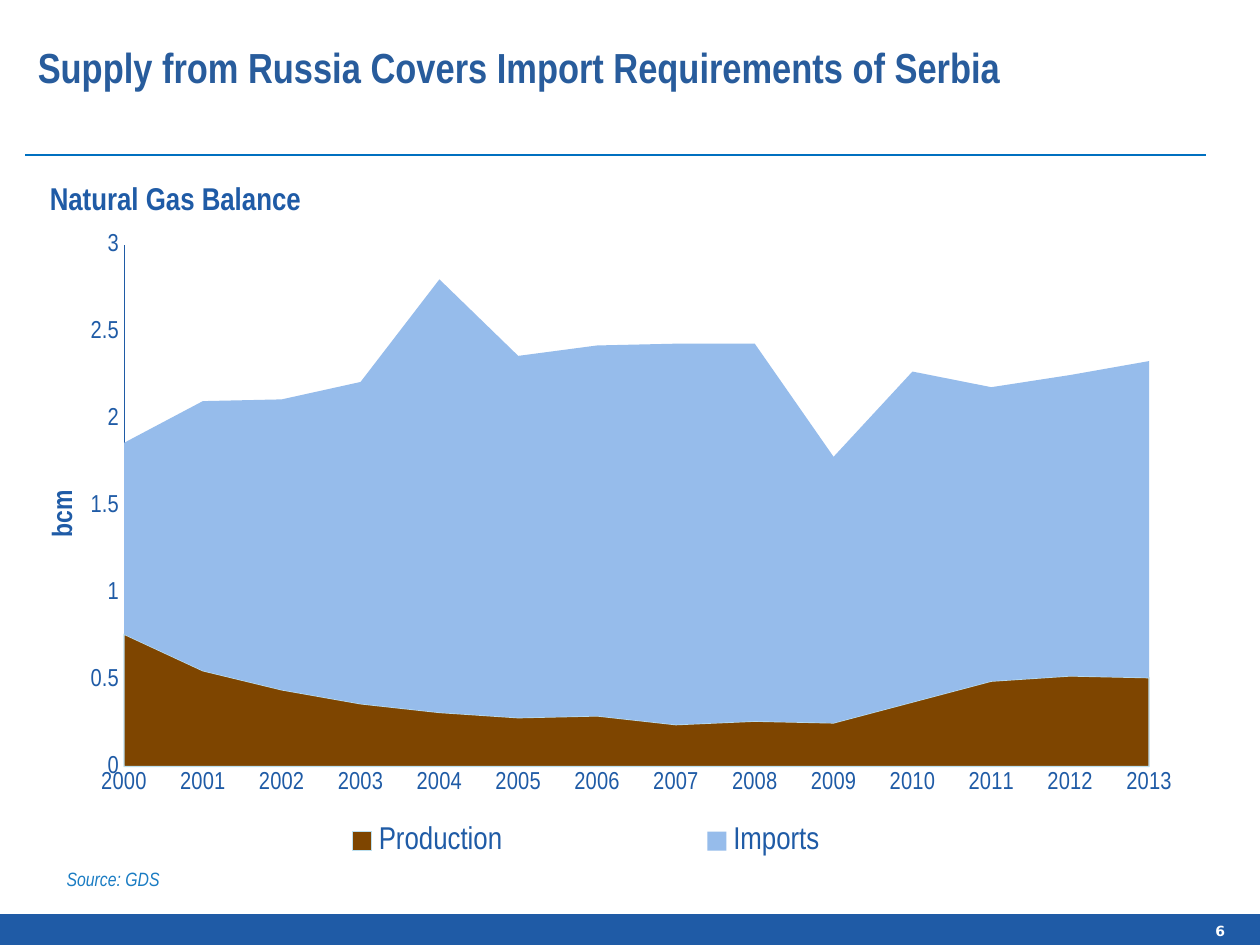
from dataclasses import dataclass

from lxml.etree import SubElement
from pptx import Presentation
from pptx.chart.data import CategoryChartData
from pptx.dml.color import RGBColor
from pptx.enum.chart import XL_CHART_TYPE as ChartType
from pptx.enum.chart import XL_LEGEND_POSITION as LegendPosition
from pptx.enum.chart import XL_TICK_MARK as TickMark
from pptx.enum.shapes import MSO_CONNECTOR as Connector
from pptx.enum.shapes import MSO_SHAPE as ShapeType
from pptx.enum.text import MSO_ANCHOR as Anchor
from pptx.enum.text import PP_ALIGN as Align
from pptx.oxml import parse_xml
from pptx.oxml.ns import nsdecls, qn
from pptx.util import Inches, Pt


@dataclass(frozen=True)
class Theme:
    blue: str = "1F5BA6"
    title_blue: str = "285C9C"
    rule_blue: str = "0070C0"
    source_blue: str = "1A7CC3"
    white: str = "FFFFFF"
    outline: str = "BDE0EF"
    narrow: str = "Arial Narrow"
    sans: str = "DejaVu Sans"
    title_size: int = 24
    heading_size: int = 18
    unit_size: int = 16
    axis_size: int = 14
    source_size: int = 11
    number_size: int = 8


@dataclass(frozen=True)
class Box:
    left: float
    top: float
    width: float
    height: float

    def lengths(self) -> tuple:
        return tuple(Inches(v) for v in (self.left, self.top, self.width, self.height))


@dataclass(frozen=True)
class GasSeries:
    name: str
    color: str
    values: tuple


THEME = Theme()
YEARS = [str(year) for year in range(2000, 2014)]
SERIES = (
    GasSeries("Production", "7E4500", (0.76, 0.55, 0.44, 0.36, 0.31, 0.28, 0.29,
                                       0.24, 0.26, 0.25, 0.37, 0.49, 0.52, 0.51)),
    GasSeries("Imports", "96BCEB", (1.1, 1.55, 1.67, 1.85, 2.49, 2.08, 2.13,
                                    2.19, 2.17, 1.53, 1.9, 1.69, 1.73, 1.82)),
)


def color(value: str) -> RGBColor:
    return RGBColor.from_string(value)


def format_font(font, tint: str, **values) -> None:
    for name, value in values.items():
        setattr(font, name, value)
    font.color.rgb = color(tint)


def write(shape, text: str, tint: str, align=Align.LEFT, frame_format=None, **font_values) -> None:
    frame = shape.text_frame
    for name, value in (frame_format or {}).items():
        setattr(frame, name, value)
    paragraph = frame.paragraphs[0]
    paragraph.alignment = align
    run = paragraph.add_run()
    run.text = text
    format_font(run.font, tint, **font_values)


def set_layout(element, target: str = "", **fractions: float) -> None:
    """Place a chart part by fractions of the chart area."""
    for old in element.findall(qn("c:layout")):
        element.remove(old)
    layout = parse_xml(f"<c:layout {nsdecls('c')}/>")
    manual = SubElement(layout, qn("c:manualLayout"))
    if target:
        SubElement(manual, qn("c:layoutTarget")).set("val", target)
    for name in ("x", "y"):
        SubElement(manual, qn(f"c:{name}Mode")).set("val", "edge")
    for name, value in fractions.items():
        SubElement(manual, qn(f"c:{name}")).set("val", str(value))
    before = [child for child in element if child.tag in (qn("c:tx"), qn("c:legendPos"))]
    element.insert(len(before), layout)


def title_chart_part(part, text: str, size: int) -> None:
    frame = part.text_frame
    frame.text = text
    format_font(frame.paragraphs[0].runs[0].font, THEME.blue,
                name=THEME.narrow, size=Pt(size), bold=True)


def add_gas_chart(slide, box: Box) -> None:
    data = CategoryChartData()
    data.categories = YEARS
    for series in SERIES:
        data.add_series(series.name, series.values)
    chart = slide.shapes.add_chart(ChartType.AREA_STACKED, *box.lengths(), data).chart
    format_font(chart.font, THEME.blue, name=THEME.sans, size=Pt(10))

    # Heading and plot area
    chart.has_title = True
    title_chart_part(chart.chart_title, "Natural Gas Balance", THEME.heading_size)
    chart.chart_title.include_in_layout = False
    set_layout(chart.chart_title._element, x=0, y=0.02)
    plot = chart.plots[0]
    plot.vary_by_categories = False
    set_layout(chart._chartSpace.chart.plotArea, "inner", x=0.07, y=0.113, w=0.898, h=0.741)

    # Areas
    for series, gas in zip(plot.series, SERIES):
        series.format.fill.solid()
        series.format.fill.fore_color.rgb = color(gas.color)
    outline = plot.series[0].format.line
    outline.color.rgb = color(THEME.outline)
    outline.width = Pt(0.75)

    # Axes
    for axis in (chart.category_axis, chart.value_axis):
        axis_format = {"major_tick_mark": TickMark.NONE, "minor_tick_mark": TickMark.NONE,
                       "has_major_gridlines": False}
        for name, value in axis_format.items():
            setattr(axis, name, value)
        axis.format.line.color.rgb = color(THEME.blue)
        axis.format.line.width = Pt(0.25)
        format_font(axis.tick_labels.font, THEME.blue,
                    name=THEME.narrow, size=Pt(THEME.axis_size), bold=False)
    value_axis = chart.value_axis
    value_axis.minimum_scale, value_axis.maximum_scale, value_axis.major_unit = 0, 3, 0.5
    value_axis.tick_labels.number_format = "General"
    value_axis.tick_labels.number_format_is_linked = False
    title_chart_part(value_axis.axis_title, "bcm", THEME.unit_size)
    for crossing in value_axis._element.findall(qn("c:crossBetween")):
        crossing.set("val", "midCat")

    # Legend
    chart.has_legend = True
    chart.legend.position = LegendPosition.BOTTOM
    chart.legend.include_in_layout = False
    format_font(chart.legend.font, THEME.blue, name=THEME.narrow, size=Pt(THEME.heading_size))
    set_layout(chart.legend._element, x=0.1, y=0.92, w=0.75, h=0.08)


def add_footer(slide) -> None:
    band = slide.shapes.add_shape(ShapeType.RECTANGLE, *Box(0, 7.26, 10, 0.24).lengths())
    band.shadow.inherit = False
    band.fill.solid()
    band.fill.fore_color.rgb = color(THEME.blue)
    band.line.color.rgb = color(THEME.blue)
    band.line.width = Pt(0.75)
    number = slide.shapes.add_textbox(*Box(9.41, 7.28, 0.55, 0.21).lengths())
    write(number, "6", THEME.white, Align.CENTER,
          {"word_wrap": True, "vertical_anchor": Anchor.MIDDLE},
          name=THEME.sans, size=Pt(THEME.number_size), bold=True)


def add_rule(slide) -> None:
    rule = slide.shapes.add_connector(
        Connector.STRAIGHT, Inches(0.2), Inches(1.23), Inches(9.57), Inches(1.23))
    rule.line.color.rgb = color(THEME.rule_blue)
    rule.line.width = Pt(1.25)
    SubElement(rule._element.spPr, qn("a:effectLst"))


def main() -> None:
    presentation = Presentation()
    presentation.slide_width, presentation.slide_height = Inches(10), Inches(7.5)
    slide = presentation.slides.add_slide(presentation.slide_layouts[5])

    # Title
    title = slide.shapes.title
    title.left, title.top, title.width, title.height = Box(0.2, 0.28, 8.9, 0.94).lengths()
    write(title, "Supply from Russia Covers Import Requirements of Serbia", THEME.title_blue,
          frame_format={"vertical_anchor": Anchor.TOP, "word_wrap": True},
          name=THEME.narrow, size=Pt(THEME.title_size), bold=True)

    add_footer(slide)
    add_rule(slide)

    # Source note
    source = slide.shapes.add_textbox(*Box(0.43, 6.83, 0.95, 0.29).lengths())
    write(source, "Source: GDS", THEME.source_blue, frame_format={"word_wrap": False},
          name=THEME.narrow, size=Pt(THEME.source_size), italic=True)

    add_gas_chart(slide, Box(0.35, 1.31, 9.06, 5.59))
    presentation.save("out.pptx")


if __name__ == "__main__":
    main()
